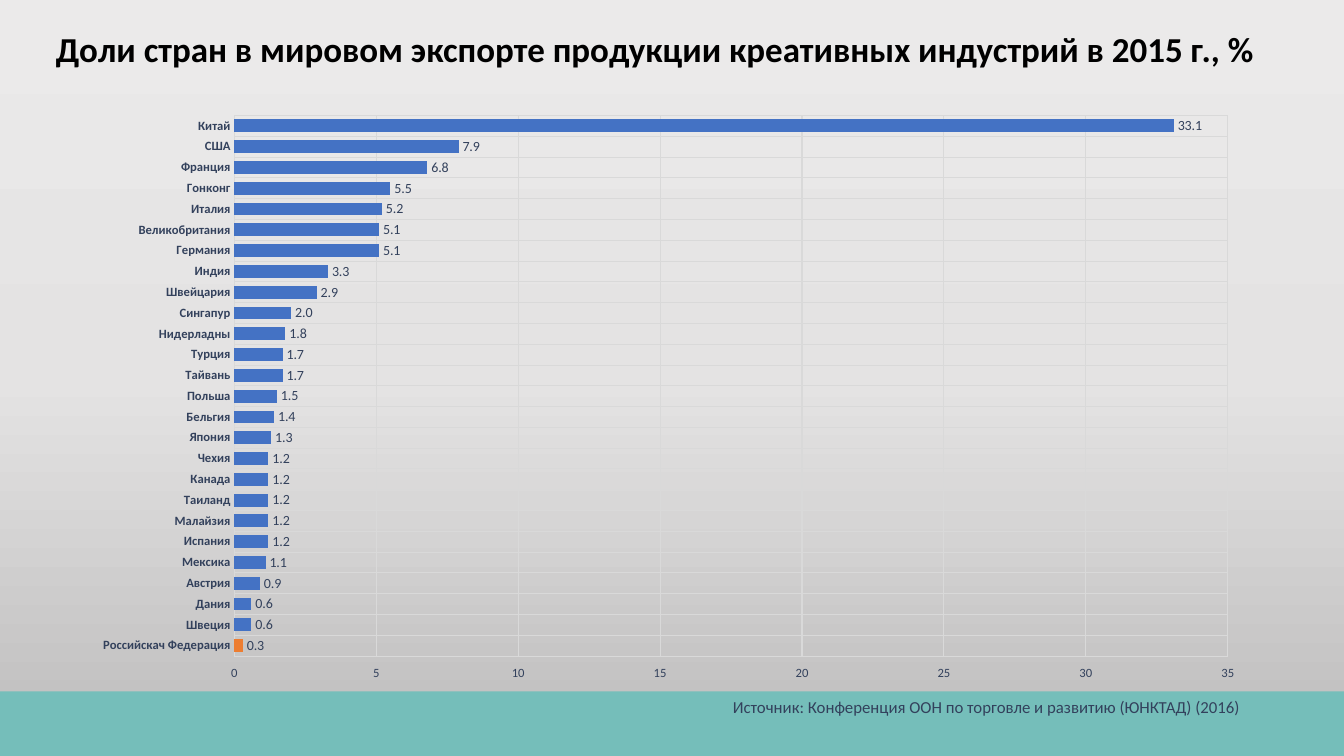
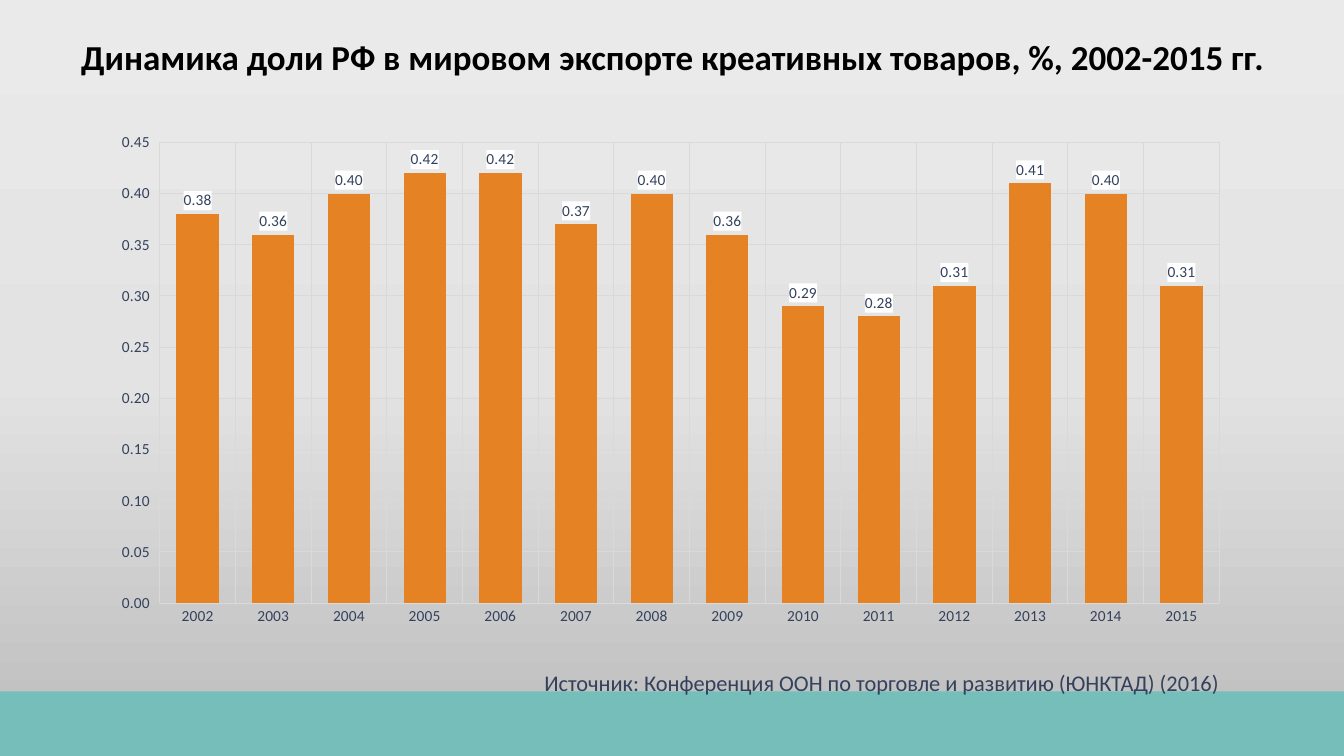
from copy import deepcopy
from dataclasses import dataclass

from pptx import Presentation
from pptx.chart.data import CategoryChartData
from pptx.dml.color import RGBColor
from pptx.enum.chart import XL_CHART_TYPE, XL_LABEL_POSITION, XL_TICK_MARK
from pptx.enum.shapes import MSO_SHAPE
from pptx.enum.text import MSO_ANCHOR, MSO_AUTO_SIZE, PP_ALIGN
from pptx.oxml import parse_xml
from pptx.oxml.ns import nsdecls, qn
from pptx.util import Inches, Pt

BAR, COLUMN = XL_CHART_TYPE.BAR_CLUSTERED, XL_CHART_TYPE.COLUMN_CLUSTERED
OUTSIDE = XL_LABEL_POSITION.OUTSIDE_END
NO_TICK, TICK_OUT = XL_TICK_MARK.NONE, XL_TICK_MARK.OUTSIDE
RECT = MSO_SHAPE.RECTANGLE
MIDDLE, TOP = MSO_ANCHOR.MIDDLE, MSO_ANCHOR.TOP
LEFT, CENTER, RIGHT = PP_ALIGN.LEFT, PP_ALIGN.CENTER, PP_ALIGN.RIGHT
NO_FIT = MSO_AUTO_SIZE.NONE

FONT = "Calibri"
COLORS = {
    "top": "EBEAEA", "mid": "E4E3E3", "low": "BDBCBC",
    "band": "75BEBA", "title": "000000", "text": "33415C",
    "grid": "D9D9D9", "blue": "4472C4", "accent": "ED7D31",
    "orange": "E58224", "white": "FFFFFF",
}
SOURCE = "Источник: Конференция ООН по торговле и развитию (ЮНКТАД) (2016)"

Box = tuple[float, float, float, float]


@dataclass(frozen=True)
class Graph:
    kind: int
    box: Box
    plot: Box  # inner plot area as fractions of the chart
    data: dict[str, float]
    color: str
    gap: int
    top: float
    step: float
    axis_fmt: str
    label_fmt: str
    axis_size: int
    label_size: int
    overlap: int = 0
    bold: bool = False
    marked: int | None = None  # index of the highlighted bar
    label_fill: str | None = None


@dataclass(frozen=True)
class Page:
    title: str
    title_box: Box
    align: int
    graph: Graph
    note_box: Box
    note_size: int


def rgb(name: str) -> RGBColor:
    return RGBColor.from_string(COLORS[name])


def place(box: Box) -> list[int]:
    return [Inches(v) for v in box]


def write(shape, text: str, *, size: int, color: str = "text", bold: bool = False,
          align: int = LEFT, anchor: int = TOP) -> None:
    frame = shape.text_frame
    frame.word_wrap = True
    frame.auto_size = NO_FIT
    frame.vertical_anchor = anchor
    para = frame.paragraphs[0]
    para.alignment = align
    run = para.add_run()
    run.text = text
    style(run.font, size, color, bold)


def style(font, size: int, color: str = "text", bold: bool = False) -> None:
    font.name, font.size, font.bold = FONT, Pt(size), bold
    font.color.rgb = rgb(color)


def rule(line) -> None:
    line.color.rgb = rgb("grid")
    line.width = Pt(0.75)


def paint(master) -> None:
    """Give every slide the same vertical gradient."""
    fill = master.background.fill
    fill.gradient()
    fill.gradient_angle = 270
    stops = next(master.element.iter(qn("a:gsLst")))
    stops.append(deepcopy(stops[-1]))
    for stop, name, pos in zip(fill.gradient_stops, ("top", "mid", "low"), (0, 0.5, 1)):
        stop.color.rgb = rgb(name)
        stop.position = pos


def fix_plot(chart, plot: Box) -> None:
    area = next(chart.element.iter(qn("c:plotArea")))
    for old in area.findall(qn("c:layout")):
        area.remove(old)
    modes = '<c:xMode val="edge"/><c:yMode val="edge"/>'
    sizes = "".join(f'<c:{k} val="{v}"/>' for k, v in zip("xywh", plot))
    area.insert(0, parse_xml(
        f'<c:layout {nsdecls("c")}><c:manualLayout><c:layoutTarget val="inner"/>'
        f'{modes}{sizes}</c:manualLayout></c:layout>'))


def fill_labels(chart, color: str) -> None:
    labels = next(chart.element.iter(qn("c:dLbls")))
    labels.find(qn("c:txPr")).addprevious(parse_xml(
        f'<c:spPr {nsdecls("c", "a")}><a:solidFill>'
        f'<a:srgbClr val="{COLORS[color]}"/></a:solidFill></c:spPr>'))


def draw_graph(slide, graph: Graph) -> None:
    data = CategoryChartData()
    data.categories = list(graph.data)
    data.add_series("Series 1", list(graph.data.values()))
    chart = slide.shapes.add_chart(graph.kind, *place(graph.box), data).chart
    chart.has_title = chart.has_legend = False
    style(chart.font, graph.label_size)
    fix_plot(chart, graph.plot)

    # Axes
    cat, val = chart.category_axis, chart.value_axis
    for axis, tick in ((cat, NO_TICK), (val, TICK_OUT)):
        axis.major_tick_mark, axis.minor_tick_mark = tick, NO_TICK
        axis.has_major_gridlines = True
        rule(axis.major_gridlines.format.line)
        style(axis.tick_labels.font, graph.axis_size, bold=graph.bold and axis is cat)
    rule(cat.format.line)
    val.format.line.fill.background()
    val.minimum_scale, val.maximum_scale, val.major_unit = 0, graph.top, graph.step
    val.tick_labels.number_format = graph.axis_fmt
    val.tick_labels.number_format_is_linked = False

    # Bars
    plot = chart.plots[0]
    plot.vary_by_categories = False
    plot.gap_width, plot.overlap = graph.gap, graph.overlap
    bars = plot.series[0]
    bars.invert_if_negative = False
    bars.format.fill.solid()
    bars.format.fill.fore_color.rgb = rgb(graph.color)
    if graph.marked is not None:
        fill = bars.points[graph.marked].format.fill
        fill.solid()
        fill.fore_color.rgb = rgb("accent")

    # Values
    labels = bars.data_labels
    labels.show_value = True
    labels.position = OUTSIDE
    labels.number_format, labels.number_format_is_linked = graph.label_fmt, False
    style(labels.font, graph.label_size)
    if graph.label_fill:
        fill_labels(chart, graph.label_fill)


def draw_page(prs, page: Page) -> None:
    slide = prs.slides.add_slide(prs.slide_layouts[5])
    band = slide.shapes.add_shape(RECT, *place((0, 6.86, 13.33, 0.64)))
    band.shadow.inherit = False
    band.fill.solid()
    band.fill.fore_color.rgb = rgb("band")
    band.line.fill.background()

    title = slide.shapes.title
    title.left, title.top, title.width, title.height = place(page.title_box)
    write(title, page.title, size=25, color="title", bold=True,
          align=page.align, anchor=MIDDLE)
    draw_graph(slide, page.graph)
    note = slide.shapes.add_textbox(*place(page.note_box))
    write(note, SOURCE, size=page.note_size)


SHARES = {
    "Российскач Федерация": 0.3, "Швеция": 0.6, "Дания": 0.6, "Австрия": 0.9,
    "Мексика": 1.1, "Испания": 1.2, "Малайзия": 1.2, "Таиланд": 1.2,
    "Канада": 1.2, "Чехия": 1.2, "Япония": 1.3, "Бельгия": 1.4, "Польша": 1.5,
    "Тайвань": 1.7, "Турция": 1.7, "Нидерладны": 1.8, "Сингапур": 2.0,
    "Швейцария": 2.9, "Индия": 3.3, "Германия": 5.1, "Великобритания": 5.1,
    "Италия": 5.2, "Гонконг": 5.5, "Франция": 6.8, "США": 7.9, "Китай": 33.1,
}
YEARS = (0.38, 0.36, 0.40, 0.42, 0.42, 0.37, 0.40,
         0.36, 0.29, 0.28, 0.31, 0.41, 0.40, 0.31)
TREND = {str(year): share for year, share in enumerate(YEARS, 2002)}

PAGES = (
    Page("Доли стран в мировом экспорте продукции креативных индустрий в 2015 г., %",
         (0.44, 0.05, 12.09, 0.86), RIGHT,
         Graph(BAR, (0.8, 1.03, 11.73, 5.83), (0.13, 0.02, 0.84, 0.92), SHARES,
               "blue", gap=62, top=35, step=5, axis_fmt="0", label_fmt="0.0",
               axis_size=9, label_size=10, bold=True, marked=0),
         (7.17, 6.86, 5.35, 0.3), 12),
    Page("Динамика доли РФ в мировом экспорте креативных товаров, %, 2002-2015 гг.",
         (0.46, 0.13, 12.42, 0.86), CENTER,
         Graph(COLUMN, (1.02, 1.21, 11.3, 5.08), (0.05, 0.04, 0.93, 0.9), TREND,
               "orange", gap=79, top=0.45, step=0.05, axis_fmt="0.00",
               label_fmt="0.00", axis_size=11, label_size=11, overlap=31,
               label_fill="white"),
         (5.3, 6.59, 7.02, 0.37), 16),
)


def main() -> None:
    prs = Presentation()
    prs.slide_width, prs.slide_height = Inches(13.33), Inches(7.5)
    paint(prs.slide_master)
    for page in PAGES:
        draw_page(prs, page)
    prs.save("out.pptx")


if __name__ == "__main__":
    main()
